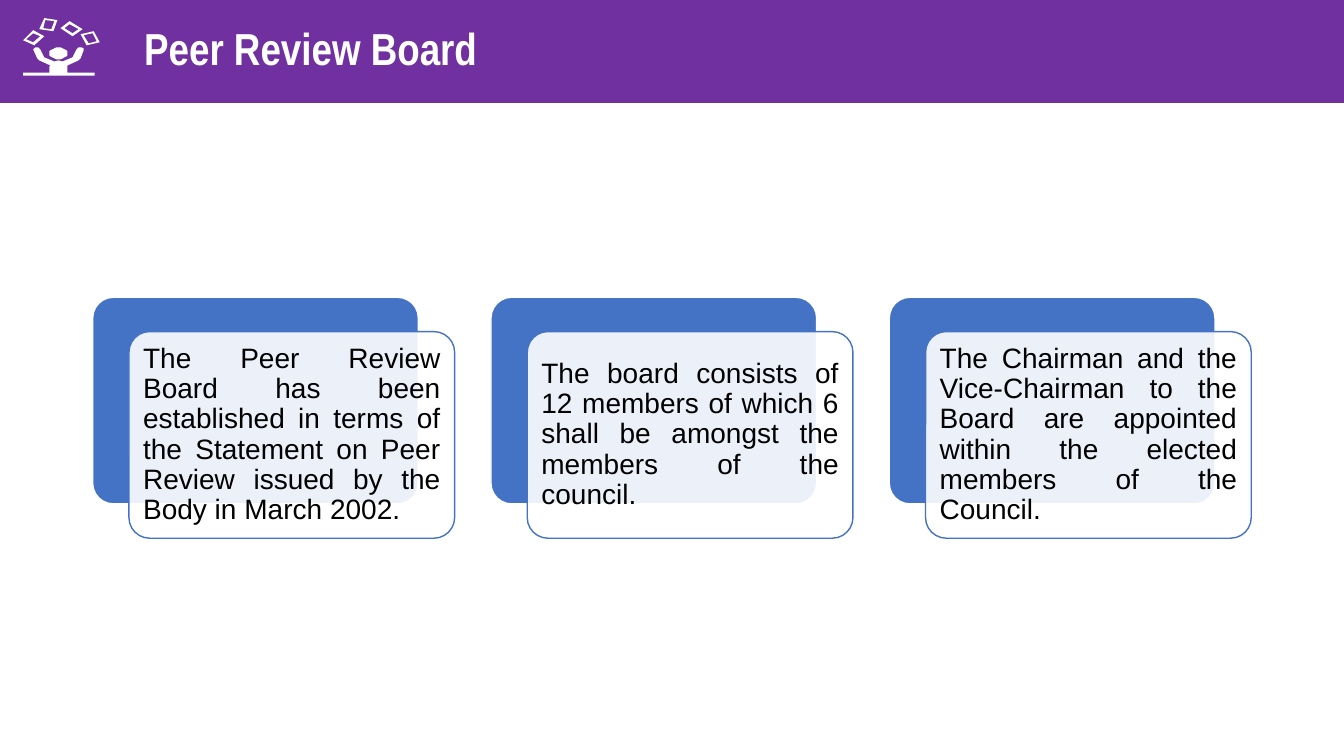
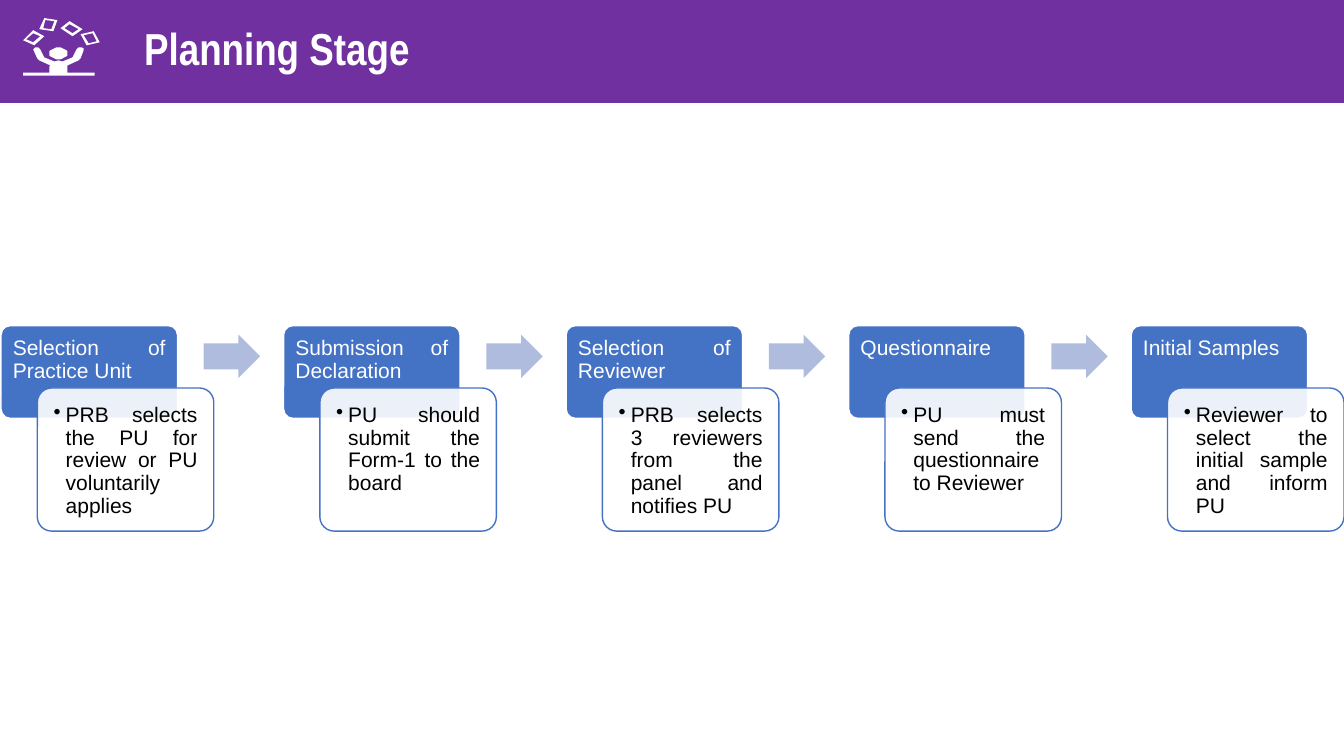
import math

from lxml import etree
from pptx import Presentation
from pptx.dml.color import RGBColor
from pptx.enum.shapes import MSO_SHAPE
from pptx.enum.text import MSO_ANCHOR, MSO_AUTO_SIZE, PP_ALIGN
from pptx.oxml.ns import qn
from pptx.util import Inches, Pt

ROUND, ARROW = MSO_SHAPE.ROUNDED_RECTANGLE, MSO_SHAPE.RIGHT_ARROW
TOP, MIDDLE = MSO_ANCHOR.TOP, MSO_ANCHOR.MIDDLE
LEFT, JUSTIFY = PP_ALIGN.LEFT, PP_ALIGN.JUSTIFY
NO_FIT = MSO_AUTO_SIZE.NONE

COLORS = {"band": "7030A0", "card": "4472C4", "arrow": "B0BCDE",
          "white": "FFFFFF", "black": "000000"}
TITLE_ONLY = 5

# Juggler icon, in hundredths of an inch; inner outlines make the holes
SHEETS = [
    [(33, 30), (44, 36), (34, 45), (23, 40)],
    [(33, 33), (26, 39), (33, 42), (40, 36)],
    [(69, 21), (60, 28), (72, 36), (82, 29)],
    [(69, 24), (78, 29), (72, 33), (64, 28)],
    [(57, 20), (44, 18), (39, 29), (53, 31)],
    [(54, 21), (51, 29), (43, 28), (45, 20)],
    [(93, 31), (99, 42), (86, 45), (80, 34)],
    [(92, 33), (83, 35), (88, 43), (96, 41)],
]
HEAD = [(58 + 9 * math.cos(a * math.pi / 12), 53 + 6 * math.sin(a * math.pi / 12))
        for a in range(24)]
BODY = [(58, 60), (54, 61), (44, 57), (40, 49), (38, 47), (35, 47), (33, 49),
        (37, 58), (39, 60), (50, 65), (49, 66), (49, 72), (23, 72), (23, 75),
        (94, 75), (94, 72), (67, 72), (67, 65), (78, 60), (80, 58), (83, 50),
        (83, 48), (81, 47), (78, 47), (76, 49), (72, 57), (62, 61)]

BOARD = [
    "The Peer Review Board has been established in terms of the Statement on "
    "Peer Review issued by the Body in March 2002.",
    "The board consists of 12 members of which 6 shall be amongst the members "
    "of the council.",
    "The Chairman and the Vice-Chairman to the Board are appointed within the "
    "elected members of the Council.",
]
STAGES = [
    ("Selection of Practice Unit",
     "PRB selects the PU for review or PU voluntarily applies"),
    ("Submission of Declaration", "PU should submit the Form-1 to the board"),
    ("Selection of Reviewer",
     "PRB selects 3 reviewers from the panel and notifies PU"),
    ("Questionnaire", "PU must send the questionnaire to Reviewer"),
    ("Initial Samples", "Reviewer to select the initial sample and inform PU"),
]


def rgb(name):
    return RGBColor.from_string(COLORS[name])


def write(sp, text, size=15, color="black", font="Arial", bold=False,
          align=JUSTIFY, anchor=TOP, insets=(0.12, 0.12, 0.12, 0.12),
          spacing=0.9, bullet=False):
    """Put one formatted paragraph into a shape; insets are in inches."""
    tf = sp.text_frame
    tf.word_wrap, tf.auto_size, tf.vertical_anchor = True, NO_FIT, anchor
    (tf.margin_left, tf.margin_top,
     tf.margin_right, tf.margin_bottom) = map(Inches, insets)
    p = tf.paragraphs[0]
    p.alignment, p.line_spacing = align, spacing
    r = p.add_run()
    r.text = text
    r.font.name, r.font.size, r.font.bold = font, Pt(size), bold
    r.font.color.rgb = rgb(color)
    if bullet:
        pPr = p._p.get_or_add_pPr()
        pPr.set("marL", str(Inches(0.12)))
        pPr.set("indent", str(-Inches(0.12)))
        etree.SubElement(pPr, qn("a:buChar")).set("char", "•")


class Deck:
    """Shared style and current slide; lengths are percent of the slide."""

    def __init__(self):
        self.prs = Presentation()
        self.prs.slide_width, self.prs.slide_height = Inches(13.33), Inches(7.5)
        self.s = None

    def box(self, x, y, w, h):
        col, row = self.prs.slide_width / 100, self.prs.slide_height / 100
        return round(x * col), round(y * row), round(w * col), round(h * row)

    def paint(self, sp, fill, line=None, width=1, alpha=None):
        sp.fill.solid()
        sp.fill.fore_color.rgb = rgb(fill)
        if alpha:
            clr = sp._element.spPr.find(qn("a:solidFill"))[0]
            etree.SubElement(clr, qn("a:alpha")).set("val", str(alpha * 1000))
        if line:
            sp.line.color.rgb = rgb(line)
            sp.line.width = Pt(width)
        else:
            sp.line.fill.background()

    def slide(self, title):
        self.s = self.prs.slides.add_slide(self.prs.slide_layouts[TITLE_ONLY])
        # The title placeholder is the band itself
        sp = self.s.shapes.title
        sp.left, sp.top, sp.width, sp.height = self.box(-0.3, -1.07, 100.3, 14.8)
        self.paint(sp, "band", "white", 0.5)
        write(sp, title, size=32, color="white", font="Arial Narrow", bold=True,
              align=LEFT, anchor=MIDDLE, insets=(1.47, 0.05, 0.1, 0.05), spacing=1)
        self.icon()

    def icon(self):
        outlines = SHEETS + [HEAD, BODY]
        fb = self.s.shapes.build_freeform(*outlines[0][0], scale=Inches(0.01))
        for i, points in enumerate(outlines):
            if i:
                fb.move_to(*points[0])
            fb.add_line_segments(points[1:], close=True)
        sp = fb.convert_to_shape()
        sp.shadow.inherit = False
        self.paint(sp, "white")

    def shape(self, kind, box, adj, fill, **style):
        sp = self.s.shapes.add_shape(kind, *self.box(*box))
        sp.shadow.inherit = False
        for i, value in enumerate(adj):
            sp.adjustments[i] = value
        self.paint(sp, fill, **style)
        return sp

    def back_card(self, *box):
        return self.shape(ROUND, box, [0.1], "card", line="white")

    def front_card(self, *box):
        return self.shape(ROUND, box, [0.1], "white", line="card", alpha=90)

    def arrow(self, *box):
        return self.shape(ARROW, box, [0.6, 0.5], "arrow")


def columns(left, right, width, count):
    """Left edges of equally spaced columns between two edges."""
    pitch = (right - left - width) / (count - 1)
    return [left + i * pitch for i in range(count)]


def main():
    deck = Deck()
    shift = 2.7  # front card to the right of its back card

    # Board: three statements
    deck.slide("Peer Review Board")
    w, h = 24.23, 27.33
    for x, text in zip(columns(6.9, 93.1, w + shift, len(BOARD)), BOARD):
        deck.back_card(x, 39.33, w, h)
        write(deck.front_card(x + shift, 43.87, w, h), text, size=20,
              anchor=MIDDLE, insets=(0.08,) * 4)

    # Planning: five stages joined by arrows
    deck.slide("Planning Stage")
    w = 13.13
    xs = columns(0.08, 100, w + shift, len(STAGES))
    for x, (stage, detail) in zip(xs, STAGES):
        write(deck.back_card(x, 43.07, w, 12.27), stage, color="white",
              insets=(0.09, 0.09, 0.09, 0.06))
        write(deck.front_card(x + shift, 51.33, w, 18.93), detail, bullet=True)
        if x != xs[-1]:
            deck.arrow(x + 15.08, 44.27, 4.2, 5.73)

    deck.prs.save("out.pptx")


if __name__ == "__main__":
    main()
